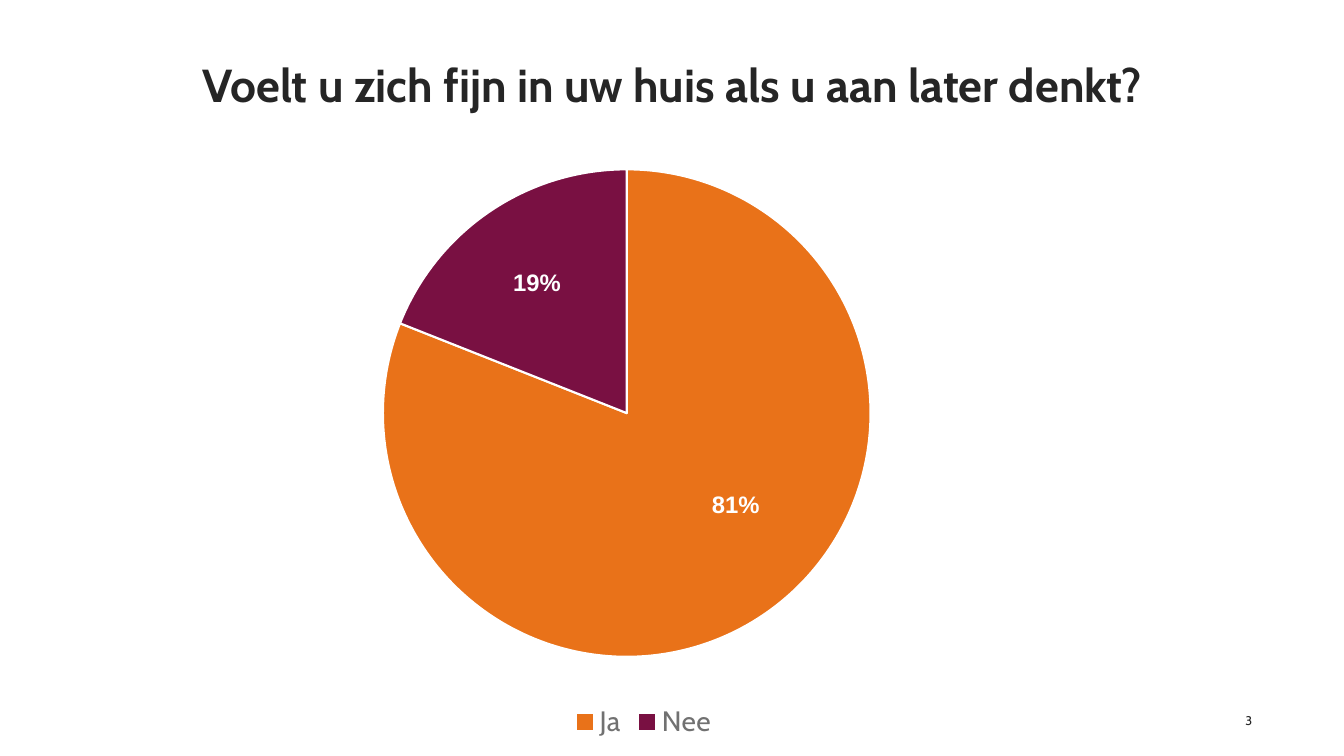
from lxml import etree
from pptx import Presentation
from pptx.chart.data import CategoryChartData
from pptx.dml.color import RGBColor
from pptx.enum.chart import XL_CHART_TYPE, XL_LEGEND_POSITION
from pptx.enum.text import MSO_ANCHOR, PP_ALIGN
from pptx.oxml.ns import qn
from pptx.util import Inches, Pt

FONT = "Cabin"
DARK, GREY, WHITE = "252525", "717171", "FFFFFF"
ANSWERS = [("Ja", 81, "E97219"), ("Nee", 19, "791042")]


def rgb(color):
    return RGBColor.from_string(color)


def style_font(font, size, color, name=FONT, bold=False):
    font.name = name
    font.size = Pt(size)
    font.bold = bold
    font.color.rgb = rgb(color)


def add_text(slide, text, left, top, width, height, size, color, name=FONT,
             bold=False, align=PP_ALIGN.LEFT, anchor=MSO_ANCHOR.TOP, spacing=1.0):
    box = slide.shapes.add_textbox(Inches(left), Inches(top), Inches(width), Inches(height))
    tf = box.text_frame
    tf.margin_left = tf.margin_top = tf.margin_right = tf.margin_bottom = 0
    tf.word_wrap = True
    tf.vertical_anchor = anchor
    p = tf.paragraphs[0]
    p.text = text
    p.alignment = align
    p.line_spacing = spacing
    style_font(p.runs[0].font, size, color, name, bold)


def set_plot_layout(chart, x, y, w, h):
    """Fix the inner plot area, in fractions of the chart frame."""
    plot_area = chart._chartSpace.chart.plotArea
    for old in plot_area.findall(qn("c:layout")):
        plot_area.remove(old)
    layout = etree.Element(qn("c:layout"))
    manual = etree.SubElement(layout, qn("c:manualLayout"))
    settings = [("layoutTarget", "inner"), ("xMode", "edge"), ("yMode", "edge"),
                ("x", x), ("y", y), ("w", w), ("h", h)]
    for tag, value in settings:
        etree.SubElement(manual, qn(f"c:{tag}")).set("val", str(value))
    plot_area.insert(0, layout)


def add_pie(slide, left, top, width, height):
    names, values, colors = zip(*ANSWERS)
    data = CategoryChartData()
    data.categories = names
    data.add_series("", values)
    chart = slide.shapes.add_chart(XL_CHART_TYPE.PIE, Inches(left), Inches(top),
                                   Inches(width), Inches(height), data).chart
    style_font(chart.font, 10, DARK)
    chart.has_title = False
    chart.has_legend = True
    chart.legend.position = XL_LEGEND_POSITION.BOTTOM
    chart.legend.include_in_layout = False
    style_font(chart.legend.font, 20, GREY)
    set_plot_layout(chart, 0.209, 0.037, 0.544, 0.816)
    for i, color in enumerate(colors):
        fmt = chart.plots[0].series[0].points[i].format
        fmt.fill.solid()
        fmt.fill.fore_color.rgb = rgb(color)
        fmt.line.color.rgb = rgb(WHITE)
        fmt.line.width = Pt(1.5)


def add_share(slide, text, left, top):
    add_text(slide, text, left, top, 0.7, 0.28, 17, WHITE, "Arial", True, spacing=Pt(21))


def main():
    prs = Presentation()
    prs.slide_width, prs.slide_height = Inches(13.33), Inches(7.5)
    slide = prs.slides.add_slide(prs.slide_layouts[6])
    add_text(slide, "Voelt u zich fijn in uw huis als u aan later denkt?",
             0.92, 0.53, 11.5, 0.67, 33, DARK, bold=True,
             align=PP_ALIGN.CENTER, anchor=MSO_ANCHOR.MIDDLE, spacing=0.9)
    add_text(slide, "3", 9.42, 7.05, 3, 0.2, 9, DARK,
             align=PP_ALIGN.RIGHT, anchor=MSO_ANCHOR.MIDDLE)
    add_pie(slide, 1.94, 1.46, 8.89, 5.93)
    add_share(slide, "81%", 7.06, 4.85)
    add_share(slide, "19%", 5.09, 2.65)
    prs.save("out.pptx")


if __name__ == "__main__":
    main()
